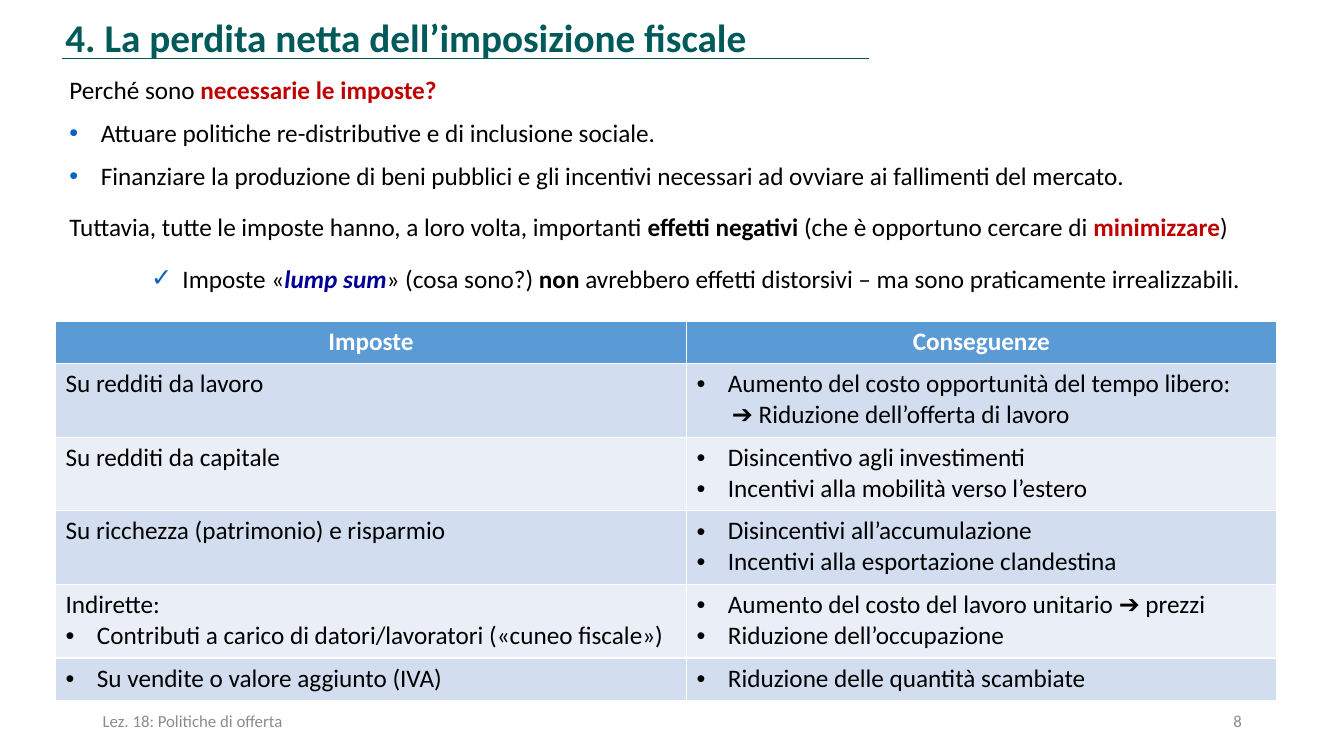
import pptx
import pptx.dml.color
import pptx.enum.shapes
import pptx.enum.text
import pptx.oxml
import pptx.oxml.ns
import pptx.util
import lxml.etree

COLORS = {
    "title": "005A5A", "rule": "005A58", "text": "000000", "gray": "8C8C8C",
    "red": "C00000", "navy": "000099", "mark": "0563C1", "white": "FFFFFF",
    "head": "5B9BD5", "dark": "D2DEEF", "light": "EAEFF7",
}
ALIGN = pptx.enum.text.PP_ALIGN
ANCHOR = pptx.enum.text.MSO_ANCHOR
HANG = 2.33  # hanging indent, in columns

deck = pptx.Presentation()
deck.slide_width = pptx.util.Inches(13.33)
deck.slide_height = pptx.util.Inches(7.5)


# Grid of 100 columns by 100 rows
def col(n):
    return round(deck.slide_width * n / 100)


def row(n):
    return round(deck.slide_height * n / 100)


def place(box):
    x, y, w, h = box
    return col(x), row(y), col(w), row(h)


def rgb(name):
    return pptx.dml.color.RGBColor.from_string(COLORS[name])


def style(run, size=18, color="text", bold=False, italic=False):
    font = run.font
    font.name, font.size = "Calibri", pptx.util.Pt(size)
    font.bold, font.italic = bold, italic
    font.color.rgb = rgb(color)


def indent(par, left, first=0):
    props = par._p.get_or_add_pPr()
    props.set("marL", str(col(left)))
    props.set("indent", str(col(first)))
    return props


def bullet(par, sign, color="text", left=HANG):
    props = indent(par, left, -HANG)
    tag = pptx.oxml.ns.qn
    tint = lxml.etree.SubElement(props, tag("a:buClr"))
    lxml.etree.SubElement(tint, tag("a:srgbClr")).set("val", COLORS[color])
    lxml.etree.SubElement(props, tag("a:buFont")).set("typeface", "Arial")
    lxml.etree.SubElement(props, tag("a:buChar")).set("char", sign)


def label(slide, box, text, align=ALIGN.LEFT, anchor=ANCHOR.MIDDLE, **look):
    frame = slide.shapes.add_textbox(*place(box)).text_frame
    frame.word_wrap = True
    frame.vertical_anchor = anchor
    frame.text = text
    par = frame.paragraphs[0]
    par.alignment = align
    style(par.runs[0], **look)


# Title with the rule below it
def header(slide, box, text):
    x, y, w, h = box
    label(slide, box, text, anchor=ANCHOR.TOP, size=28, color="title", bold=True)
    left, base = x + 0.52, y + 6.66
    line = slide.shapes.add_connector(
        pptx.enum.shapes.MSO_CONNECTOR.STRAIGHT,
        col(left), row(base), col(left + 60), row(base))
    line.line.color.rgb = rgb("rule")
    line.line.width = pptx.util.Pt(0.5)
    lxml.etree.SubElement(line._element.spPr, pptx.oxml.ns.qn("a:effectLst"))


# Body: each paragraph has a mark, a space before and styled runs
def body(slide, box, pars):
    frame = slide.shapes.add_textbox(*place(box)).text_frame
    frame.word_wrap = True
    for i, (sign, gap, runs) in enumerate(pars):
        par = frame.add_paragraph() if i else frame.paragraphs[0]
        par.line_spacing = 1.14
        par.space_before = pptx.util.Pt(gap)
        if sign == "✓":
            par.alignment = ALIGN.CENTER
            bullet(par, sign, "mark", HANG + 3)
        elif sign:
            bullet(par, sign, "mark")
        for text, look in runs:
            run = par.add_run()
            run.text = text
            style(run, **look)


# Cell: lines starting with a bullet or an arrow are indented
def fill(cell, text, tint, head):
    cell.fill.solid()
    cell.fill.fore_color.rgb = rgb(tint)
    cell.text_frame.text = text.replace("• ", "")
    for par, line in zip(cell.text_frame.paragraphs, text.split("\n")):
        if head:
            par.alignment = ALIGN.CENTER
        if line.startswith("•"):
            bullet(par, "•")
        elif line.startswith("➔"):
            indent(par, HANG + 0.3)
        style(par.runs[0], color="white" if head else "text", bold=head)


def grid(slide, box, wides, talls, rows):
    table = slide.shapes.add_table(len(rows), len(wides), *place(box)).table
    for part, wide in zip(table.columns, wides):
        part.width = col(wide)
    for r, (tall, texts) in enumerate(zip(talls, rows)):
        table.rows[r].height = row(tall)
        tint = "head" if r == 0 else ("light", "dark")[r % 2]
        for c, text in enumerate(texts):
            fill(table.cell(r, c), text, tint, r == 0)


def footer(slide, box, text, page):
    x, y, w, h = box
    label(slide, (x, y, 26.1, h), text, size=12, color="gray")
    label(slide, (x + w - 22.5, y, 22.5, h), page, ALIGN.RIGHT, size=12, color="gray")


PLAIN, BOLD = {}, {"bold": True}
RED = {"color": "red", "bold": True}
NAVY = {"color": "navy", "bold": True, "italic": True}
PARS = [
    ("", 6, [("Perché sono ", PLAIN), ("necessarie le imposte?", RED)]),
    ("•", 6, [("Attuare politiche re-distributive e di inclusione sociale.", PLAIN)]),
    ("•", 6, [("Finanziare la produzione di beni pubblici e gli incentivi necessari "
               "ad ovviare ai fallimenti del mercato.", PLAIN)]),
    ("", 12, [("Tuttavia, tutte le imposte hanno, a loro volta, importanti ", PLAIN),
              ("effetti negativi ", BOLD), ("(che è opportuno cercare di ", PLAIN),
              ("minimizzare", RED), (")", PLAIN)]),
    ("✓", 12, [("Imposte «", PLAIN), ("lump sum", NAVY), ("» (cosa sono?) ", PLAIN),
               ("non", BOLD), (" avrebbero effetti distorsivi – ma sono "
                               "praticamente irrealizzabili.", PLAIN)]),
]
ROWS = [
    ("Imposte", "Conseguenze"),
    ("Su redditi da lavoro",
     "• Aumento del costo opportunità del tempo libero:\n"
     "➔ Riduzione dell’offerta di lavoro"),
    ("Su redditi da capitale",
     "• Disincentivo agli investimenti\n• Incentivi alla mobilità verso l’estero"),
    ("Su ricchezza (patrimonio) e risparmio",
     "• Disincentivi all’accumulazione\n• Incentivi alla esportazione clandestina"),
    ("Indirette:\n• Contributi a carico di datori/lavoratori («cuneo fiscale»)",
     "• Aumento del costo del lavoro unitario ➔ prezzi\n• Riduzione dell’occupazione"),
    ("• Su vendite o valore aggiunto (IVA)", "• Riduzione delle quantità scambiate"),
]


def main():
    slide = deck.slides.add_slide(deck.slide_layouts[6])
    header(slide, (4.13, 1.07, 71.55, 14.27),
           "4. La perdita netta dell’imposizione fiscale")
    body(slide, (4.43, 8.67, 91.65, 31.07), PARS)
    grid(slide, (4.13, 42.53, 90.83, 50.12), (46.95, 43.88),
         [5.6] + [9.73] * 4 + [5.6], ROWS)
    footer(slide, (6.9, 92.67, 86.25, 5.33), "Lez. 18: Politiche di offerta", "8")
    deck.save("out.pptx")


if __name__ == "__main__":
    main()
